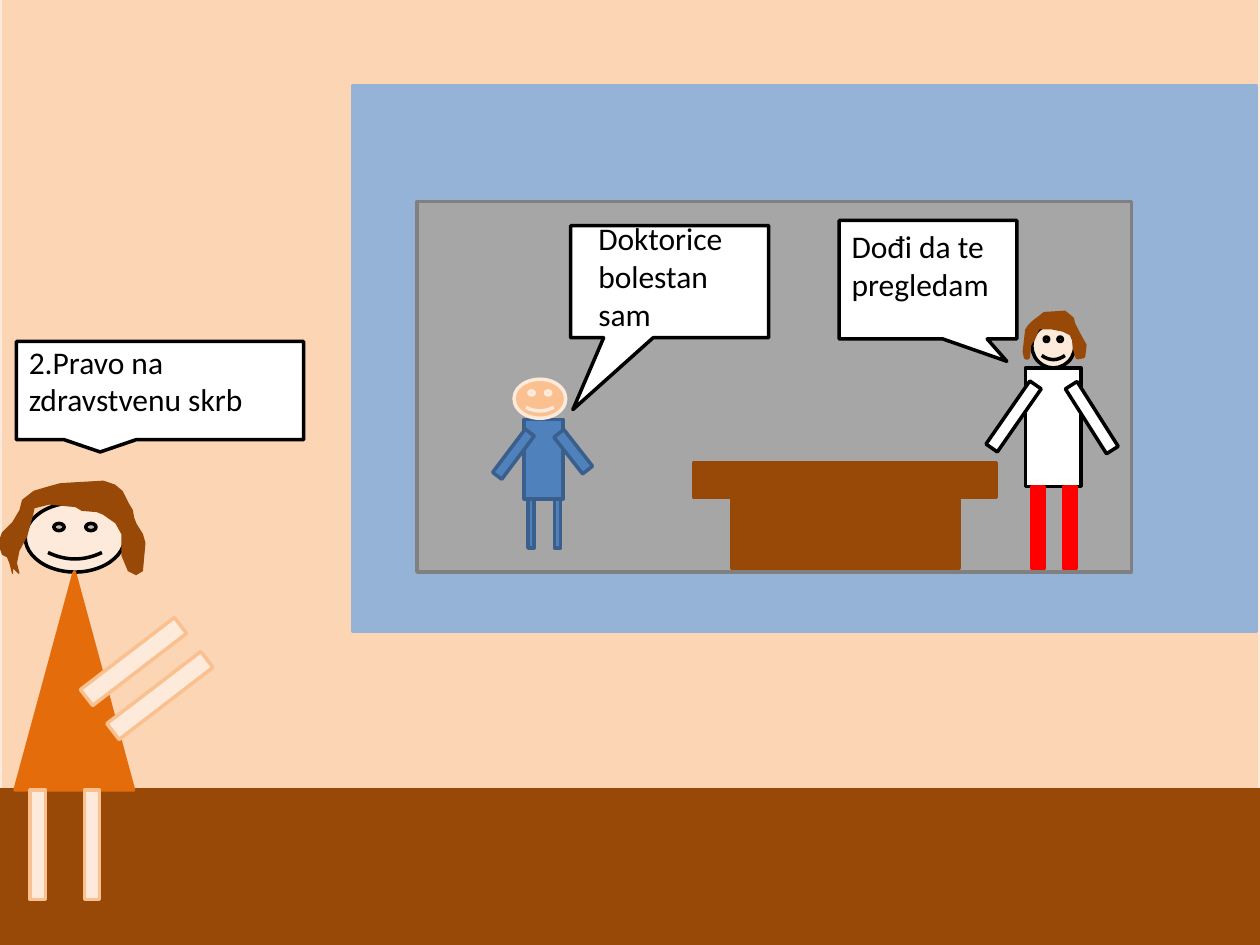
"""Build a classroom scene about the right to health care."""
from dataclasses import dataclass
from typing import Optional

from pptx import Presentation
from pptx import util as u
from pptx.dml.color import RGBColor
from pptx.enum import shapes, text

COLORS = {
    "wall": "FCD5B5", "skin": "FDEADA", "tan": "FAC090", "brown": "984807",
    "board": "95B3D7", "room": "A6A6A6", "frame": "808080", "shirt": "4F81BD",
    "shirt_edge": "3A5F8C", "white": "FFFFFF", "black": "000000",
    "red": "FF0000", "dress": "E46C0A",
}
RECTANGLE = shapes.MSO_SHAPE.RECTANGLE
SMILEY = shapes.MSO_SHAPE.SMILEY_FACE
TRIANGLE = shapes.MSO_SHAPE.ISOSCELES_TRIANGLE
CALLOUT = shapes.MSO_SHAPE.RECTANGULAR_CALLOUT
Box = tuple[float, float, float, float]
Point = tuple[float, float]


@dataclass
class Part:
    box: Box
    fill: str
    line: str
    kind: int = RECTANGLE
    rotation: float = 0


@dataclass
class Speech:
    bubble: Box
    label: Box
    words: str
    tail: Optional[Point] = None


BACKGROUND = [
    Part((0, -0.03, 10, 7.5), "wall", "skin"),
    Part((0, 6.27, 10, 1.23), "brown", "brown"),
]
BOARD = [
    Part((2.8, 0.68, 7.17, 4.33), "board", "board"),
    Part((3.31, 1.6, 5.67, 2.94), "room", "frame"),
]
PATIENT = [
    Part((4.16, 3.33, 0.31, 0.63), "shirt", "shirt_edge"),
    *[Part((left, 3.96, 0.05, 0.39), "shirt", "shirt_edge") for left in (4.4, 4.19)],
    Part((4.03, 3.39, 0.09, 0.43), "shirt", "shirt_edge", rotation=37),
    Part((4.5, 3.4, 0.1, 0.37), "shirt", "shirt_edge", rotation=321.9),
    Part((4.08, 3.01, 0.41, 0.31), "tan", "skin", SMILEY),
]
DESK = [
    Part((5.51, 3.67, 2.4, 0.28), "brown", "brown"),
    Part((5.81, 3.95, 1.8, 0.56), "brown", "brown"),
]
DOCTOR = [
    Part((8.19, 2.57, 0.34, 0.35), "skin", "black", SMILEY),
    Part((8.14, 2.92, 0.44, 0.94), "white", "black"),
    *[Part((left, 3.86, 0.1, 0.65), "red", "red") for left in (8.19, 8.44)],
    Part((7.74, 3.25, 0.61, 0.11), "white", "black", rotation=304.8),
    Part((8.36, 3.26, 0.61, 0.11), "white", "black", rotation=57.6),
]
TEACHER = [
    Part((0.2, 3.99, 0.79, 0.55), "skin", "black", SMILEY),
    Part((0.12, 4.54, 0.94, 1.73), "dress", "dress", TRIANGLE),
    *[Part((left, top, 0.94, 0.16), "skin", "tan", rotation=322.5)
      for left, top in ((0.59, 5.17), (0.8, 5.44))],
    *[Part((left, 6.27, 0.12, 0.87), "skin", "tan") for left in (0.24, 0.67)],
]
DOCTOR_HAIR = [
    (8.16, 2.84), (8.17, 2.74), (8.21, 2.67), (8.24, 2.6), (8.34, 2.6),
    (8.44, 2.62), (8.5, 2.65), (8.52, 2.68), (8.53, 2.77), (8.55, 2.84),
    (8.6, 2.83), (8.61, 2.74), (8.56, 2.65), (8.52, 2.57), (8.51, 2.53),
    (8.45, 2.48), (8.29, 2.49), (8.2, 2.56), (8.17, 2.59), (8.15, 2.62),
    (8.13, 2.79), (8.14, 2.84),
]
TEACHER_HAIR = [
    (0.15, 4.55), (0.13, 4.47), (0.15, 4.37), (0.21, 4.26), (0.26, 4.08),
    (0.27, 4.03), (0.39, 4), (0.6, 4.02), (0.65, 4.05), (0.77, 4.06),
    (0.82, 4.08), (0.92, 4.15), (0.97, 4.24), (0.97, 4.41), (1.02, 4.53),
    (1.08, 4.56), (1.13, 4.53), (1.15, 4.31), (1.13, 4.24), (1.08, 4.16),
    (1.06, 4.11), (1.05, 4.05), (1.02, 4), (0.97, 3.9), (0.91, 3.85),
    (0.82, 3.82), (0.48, 3.84), (0.37, 3.87), (0.27, 3.9), (0.18, 3.97),
    (0.16, 4.05), (0.1, 4.15), (0.02, 4.23), (-0.01, 4.31), (0.02, 4.4),
    (0.06, 4.42), (0.08, 4.47), (0.1, 4.55), (0.1, 4.5),
]
ROOM_SPEECHES = [
    Speech((4.53, 1.79, 1.57, 0.89), (4.65, 1.69, 1.2, 1.01),
           "Doktorice bolestan sam", (-0.489, 1.141)),
    Speech((6.66, 1.75, 1.41, 0.94), (6.66, 1.75, 1.41, 0.71),
           "Dođi da te pregledam", (0.444, 0.689)),
]
TEACHER_SPEECH = Speech((0.13, 2.71, 2.28, 0.78), (0.13, 2.67, 2.28, 0.64),
                        "2.Pravo na zdravstvenu skrb")


def color(name: str) -> RGBColor:
    return RGBColor.from_string(COLORS[name])


def paint(shape, fill: str, line: str, width: float = 2) -> None:
    shape.shadow.inherit = False
    shape.fill.solid()
    shape.fill.fore_color.rgb = color(fill)
    shape.line.color.rgb = color(line)
    shape.line.width = u.Pt(width)


def draw_part(canvas, part: Part):
    shape = canvas.add_shape(part.kind, *map(u.Inches, part.box))
    shape.rotation = part.rotation
    paint(shape, part.fill, part.line)
    return shape


def draw_parts(canvas, parts: list[Part]) -> None:
    for part in parts:
        draw_part(canvas, part)


def draw_hair(canvas, points: list[Point], width: float) -> None:
    outline = [(u.Inches(x), u.Inches(y)) for x, y in points]
    builder = canvas.build_freeform(*outline[0])
    builder.add_line_segments(outline[1:], close=True)
    paint(builder.convert_to_shape(), "brown", "brown", width)


def draw_speech(canvas, speech: Speech) -> None:
    bubble = draw_part(canvas, Part(speech.bubble, "white", "black", CALLOUT))
    if speech.tail:
        bubble.adjustments[0], bubble.adjustments[1] = speech.tail
    label = canvas.add_textbox(*map(u.Inches, speech.label))
    frame = label.text_frame
    frame.word_wrap = True
    frame.auto_size = text.MSO_AUTO_SIZE.SHAPE_TO_FIT_TEXT
    run = frame.paragraphs[0].add_run()
    run.text = speech.words
    run.font.name = "Calibri"
    run.font.size = u.Pt(18)
    run.font.color.rgb = color("black")


def main() -> None:
    presentation = Presentation()
    presentation.slide_width = u.Inches(10)
    presentation.slide_height = u.Inches(7.5)
    slide = presentation.slides.add_slide(presentation.slide_layouts[6])
    draw_parts(slide.shapes, BACKGROUND)
    room = slide.shapes.add_group_shape().shapes
    draw_parts(room, BOARD + PATIENT + DESK + DOCTOR)
    draw_hair(room, DOCTOR_HAIR, 2)
    for speech in ROOM_SPEECHES:
        draw_speech(room, speech)
    draw_parts(slide.shapes, TEACHER)
    draw_hair(slide.shapes, TEACHER_HAIR, 0.75)
    draw_speech(slide.shapes.add_group_shape().shapes, TEACHER_SPEECH)
    presentation.save("out.pptx")


if __name__ == "__main__":
    main()
